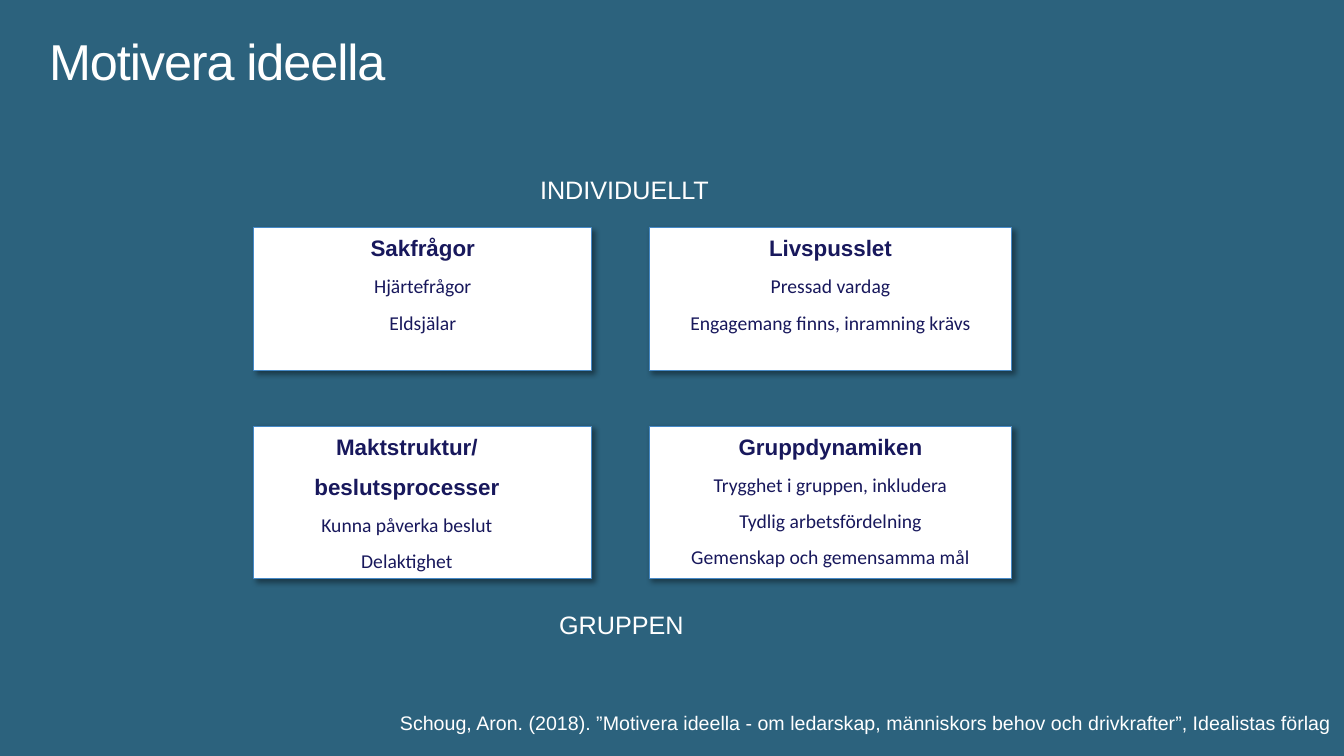
from lxml.etree import SubElement
from pptx import Presentation
from pptx.dml.color import RGBColor
from pptx.enum.shapes import MSO_SHAPE as Preset
from pptx.enum.text import MSO_ANCHOR as Anchor, PP_ALIGN as Align
from pptx.oxml.ns import qn
from pptx.util import Cm, Pt

COLORS = {"background": "2C627D", "card": "FFFFFF", "border": "4689C7",
          "light": "FFFFFF", "navy": "18185C", "shadow": "000000"}

# Grid of cards: (start, size) of each column and row, in cm
COLUMNS = [(6.4, 8.51), (16.36, 9.14)]
ROWS = [(5.74, 3.61), (10.74, 3.83)]
CARDS = [
    [(["Sakfrågor"], ["Hjärtefrågor", "Eldsjälar"]),
     (["Livspusslet"], ["Pressad vardag", "Engagemang finns, inramning krävs"])],
    [(["Maktstruktur/", "beslutsprocesser"],
      ["Kunna påverka beslut", "Delaktighet"]),
     (["Gruppdynamiken"],
      ["Trygghet i gruppen, inkludera", "Tydlig arbetsfördelning",
       "Gemenskap och gemensamma mål"])],
]


def color(name):
    return RGBColor.from_string(COLORS[name])


def add_run(paragraph, text, size, font, color_name, bold=False):
    run = paragraph.add_run()
    run.text = text
    run.font.size = Pt(size)
    run.font.name = font
    run.font.bold = bold
    run.font.color.rgb = color(color_name)
    return run


def add_label(slide, box, text, size):
    """Place one line of light text and return its shape and run."""
    shape = slide.shapes.add_textbox(*map(Cm, box))
    shape.text_frame.word_wrap = True
    run = add_run(shape.text_frame.paragraphs[0], text, size, "Arial", "light")
    return shape, run


def add_title(slide, box, text):
    shape, run = add_label(slide, box, text, 36)
    frame = shape.text_frame
    frame.margin_left = frame.margin_right = frame.margin_bottom = 0
    frame.margin_top = Cm(0.1)
    frame.paragraphs[0].line_spacing = 0.9
    run.font._element.set("spc", "-80")


def add_shadow(shape):
    shape.shadow.inherit = False
    effects = shape._element.spPr.find(qn("a:effectLst"))
    outer = SubElement(effects, qn("a:outerShdw"), blurRad=str(Pt(4)),
                       dist=str(Pt(3)), dir="2700000", algn="tl",
                       rotWithShape="0")
    shade = SubElement(outer, qn("a:srgbClr"), val=COLORS["shadow"])
    SubElement(shade, qn("a:alpha"), val="40000")


def add_card(slide, box, headings, lines):
    shape = slide.shapes.add_shape(Preset.RECTANGLE, *map(Cm, box))
    shape.fill.solid()
    shape.fill.fore_color.rgb = color("card")
    shape.line.color.rgb = color("border")
    shape.line.width = Pt(0.75)
    add_shadow(shape)

    frame = shape.text_frame
    frame.word_wrap = True
    frame.vertical_anchor = Anchor.TOP
    for index, text in enumerate(headings + lines):
        paragraph = frame.add_paragraph() if index else frame.paragraphs[0]
        paragraph.alignment = Align.CENTER
        paragraph.line_spacing = 1.07
        paragraph.space_after = Pt(8)
        if text.endswith("/"):  # a right indent moves the split heading left
            paragraph._p.get_or_add_pPr().set("marR", str(Cm(0.8)))
        if index < len(headings):
            add_run(paragraph, text, 16, "Arial", "navy", bold=True)
        else:
            add_run(paragraph, text, 14, "Calibri", "navy")


def add_matrix(slide):
    for (top, height), row in zip(ROWS, CARDS):
        for (left, width), (headings, lines) in zip(COLUMNS, row):
            add_card(slide, (left, top, width, height), headings, lines)


def main():
    presentation = Presentation()
    presentation.slide_width = Cm(33.87)
    presentation.slide_height = Cm(19.05)
    slide = presentation.slides.add_slide(presentation.slide_layouts[6])
    slide.background.fill.solid()
    slide.background.fill.fore_color.rgb = color("background")

    add_title(slide, (1.24, 0.84, 23.19, 1.6), "Motivera ideella")

    # Cards between the two level labels
    add_matrix(slide)
    add_label(slide, (13.36, 4.27, 5, 1.02), "INDIVIDUELLT", 18)
    add_label(slide, (13.84, 15.24, 3.73, 1.02), "GRUPPEN", 18)

    # Reference
    reference, _ = add_label(
        slide, (9.83, 17.78, 24.04, 0.86),
        "Schoug, Aron. (2018). ”Motivera ideella - om ledarskap, "
        "människors behov och drivkrafter”, Idealistas förlag", 14)
    reference.text_frame.margin_right = 0

    presentation.save("out.pptx")


if __name__ == "__main__":
    main()
